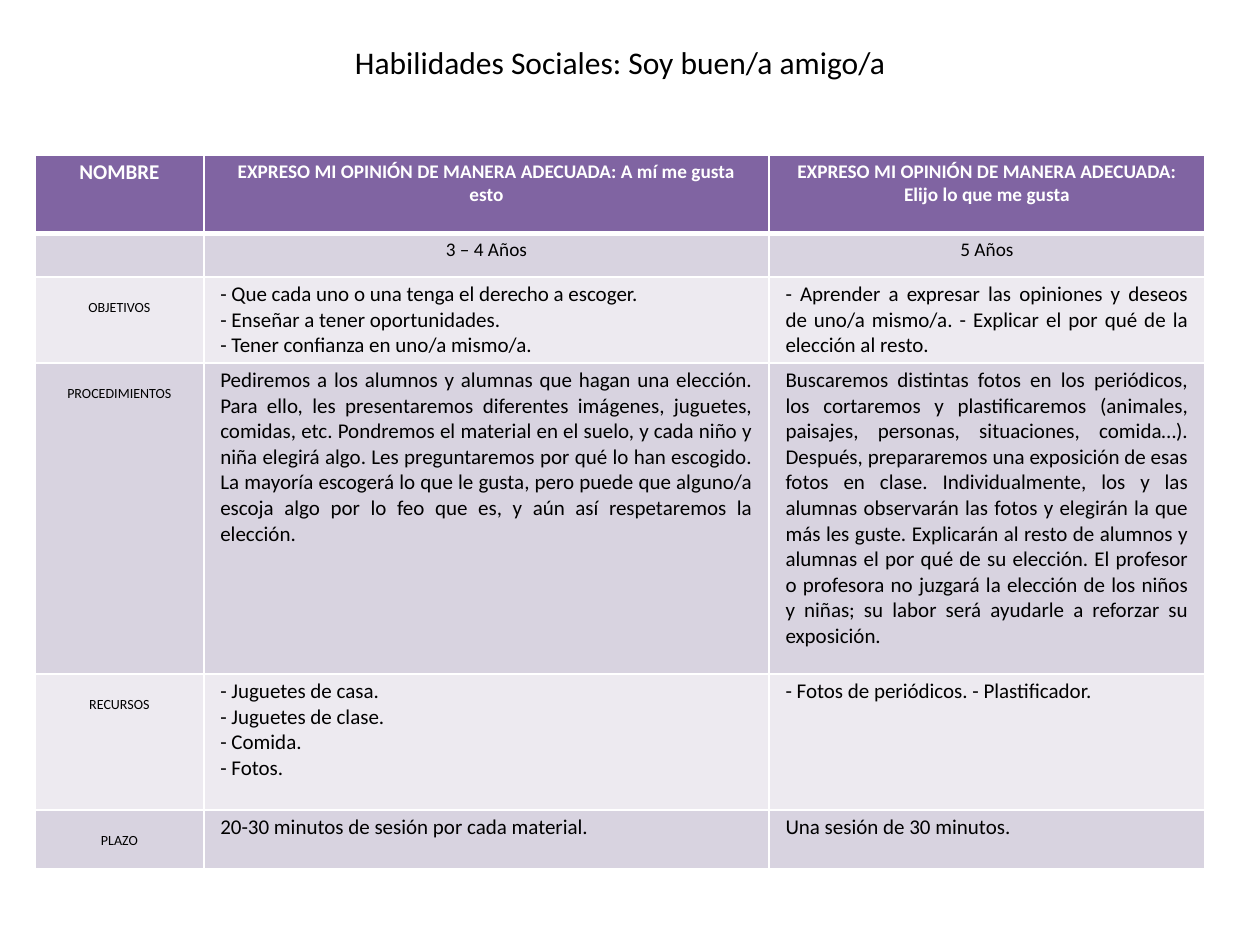
"""Builds a slide with a table of social skills activities for two age groups."""
from lxml.etree import SubElement
from pptx import Presentation
from pptx.dml.color import RGBColor as RGB
from pptx.enum.text import PP_ALIGN as AL
from pptx.oxml.ns import qn
from pptx.util import Pt

TITLE = "Habilidades Sociales: Soy buen/a amigo/a"
HEADER = ["NOMBRE",
          "EXPRESO MI OPINIÓN DE MANERA ADECUADA: A mí me gusta esto",
          "EXPRESO MI OPINIÓN DE MANERA ADECUADA: Elijo lo que me gusta"]
AGES = ["", "3 – 4 Años", "5 Años"]
BODY = [
    ("OBJETIVOS",
     ["- Que cada uno o una tenga el derecho a escoger.",
      "- Enseñar a tener oportunidades.",
      "- Tener confianza en uno/a mismo/a."],
     "- Aprender a expresar las opiniones y deseos de uno/a mismo/a. "
     "- Explicar el por qué de la elección al resto."),
    ("PROCEDIMIENTOS",
     "Pediremos a los alumnos y alumnas que hagan una elección. Para ello, les "
     "presentaremos diferentes imágenes, juguetes, comidas, etc. Pondremos el "
     "material en el suelo, y cada niño y niña elegirá algo. Les preguntaremos "
     "por qué lo han escogido. La mayoría escogerá lo que le gusta, pero puede "
     "que alguno/a escoja algo por lo feo que es, y aún así respetaremos la "
     "elección.",
     "Buscaremos distintas fotos en los periódicos, los cortaremos y "
     "plastificaremos (animales, paisajes, personas, situaciones, comida…). "
     "Después, prepararemos una exposición de esas fotos en clase. "
     "Individualmente, los y las alumnas observarán las fotos y elegirán la que "
     "más les guste. Explicarán al resto de alumnos y alumnas el por qué de su "
     "elección. El profesor o profesora no juzgará la elección de los niños y "
     "niñas; su labor será ayudarle a reforzar su exposición."),
    ("RECURSOS",
     ["- Juguetes de casa.", "- Juguetes de clase.", "- Comida.", "- Fotos."],
     ["- Fotos de periódicos. - Plastificador."]),
    ("PLAZO",
     ["20-30 minutos de sesión por cada material."],
     ["Una sesión de 30 minutos."]),
]
COLORS = {"header": "8064A2", "dark": "D8D3E0", "light": "EDEAF0",
          "white": "FFFFFF", "black": "000000"}
FONT = "Calibri"
LEFT, TOP = 20, 88.6
COL_WIDTHS = [96.5, 323, 249]
ROW_HEIGHTS = [44.9, 24.9, 49.1, 177.7, 77.7, 33.7]
INSET_X, INSET_Y, LABEL_DROP = 9.4, 2.6, 9.8


def write(tf, lines, size, color="black", bold=False, align=AL.LEFT):
    for i, line in enumerate(lines):
        p = tf.paragraphs[0] if i == 0 else tf.add_paragraph()
        p.alignment = align
        if not line:
            SubElement(p._p, qn("a:endParaRPr"), sz=str(size * 100))
            continue
        r = p.add_run()
        r.text = line
        r.font.name, r.font.size, r.font.bold = FONT, Pt(size), bold
        r.font.color.rgb = RGB.from_string(COLORS[color])


def add_borders(cell, top, bottom):
    tc_pr = cell._tc.get_or_add_tcPr()
    widths = {"a:lnL": 1, "a:lnR": 1, "a:lnT": top, "a:lnB": bottom}
    for i, (tag, width) in enumerate(widths.items()):
        ln = SubElement(tc_pr, qn(tag), w=str(Pt(width)))
        SubElement(SubElement(ln, qn("a:solidFill")), qn("a:srgbClr"),
                   val=COLORS["white"])
        tc_pr.remove(ln)
        tc_pr.insert(i, ln)


def fill_cell(cell, row, col, content):
    cell.margin_left = cell.margin_right = Pt(INSET_X)
    cell.margin_top = cell.margin_bottom = Pt(INSET_Y)
    fill = "header" if row == 0 else "dark" if row % 2 else "light"
    cell.fill.solid()
    cell.fill.fore_color.rgb = RGB.from_string(COLORS[fill])
    add_borders(cell, 3 if row == 1 else 1, 3 if row == 0 else 1)
    tf = cell.text_frame
    if row == 0:
        write(tf, [content], 11 if col else 12, "white", True, AL.CENTER)
    elif row == 1:
        write(tf, [content], 11, align=AL.CENTER)
    elif col == 0:
        cell.margin_top = Pt(INSET_Y + LABEL_DROP)
        write(tf, [content], 8, align=AL.CENTER)
    elif isinstance(content, list):
        write(tf, content, 12)
    else:
        write(tf, [content], 12, align=AL.JUSTIFY)


def main():
    prs = Presentation()
    prs.slide_width, prs.slide_height = Pt(720), Pt(540)
    s = prs.slides.add_slide(prs.slide_layouts[6])

    title = s.shapes.add_textbox(Pt(195.8), Pt(20.9), Pt(345.6), Pt(29))
    title.text_frame.word_wrap = True
    write(title.text_frame, [TITLE], 18)

    rows = [HEADER, AGES, *BODY]
    table = s.shapes.add_table(len(rows), len(COL_WIDTHS), Pt(LEFT), Pt(TOP),
                               Pt(sum(COL_WIDTHS)), Pt(sum(ROW_HEIGHTS))).table
    for column, width in zip(table.columns, COL_WIDTHS):
        column.width = Pt(width)
    for i, (row, height) in enumerate(zip(rows, ROW_HEIGHTS)):
        table.rows[i].height = Pt(height)
        for j, content in enumerate(row):
            fill_cell(table.cell(i, j), i, j, content)
    prs.save("out.pptx")


if __name__ == "__main__":
    main()
